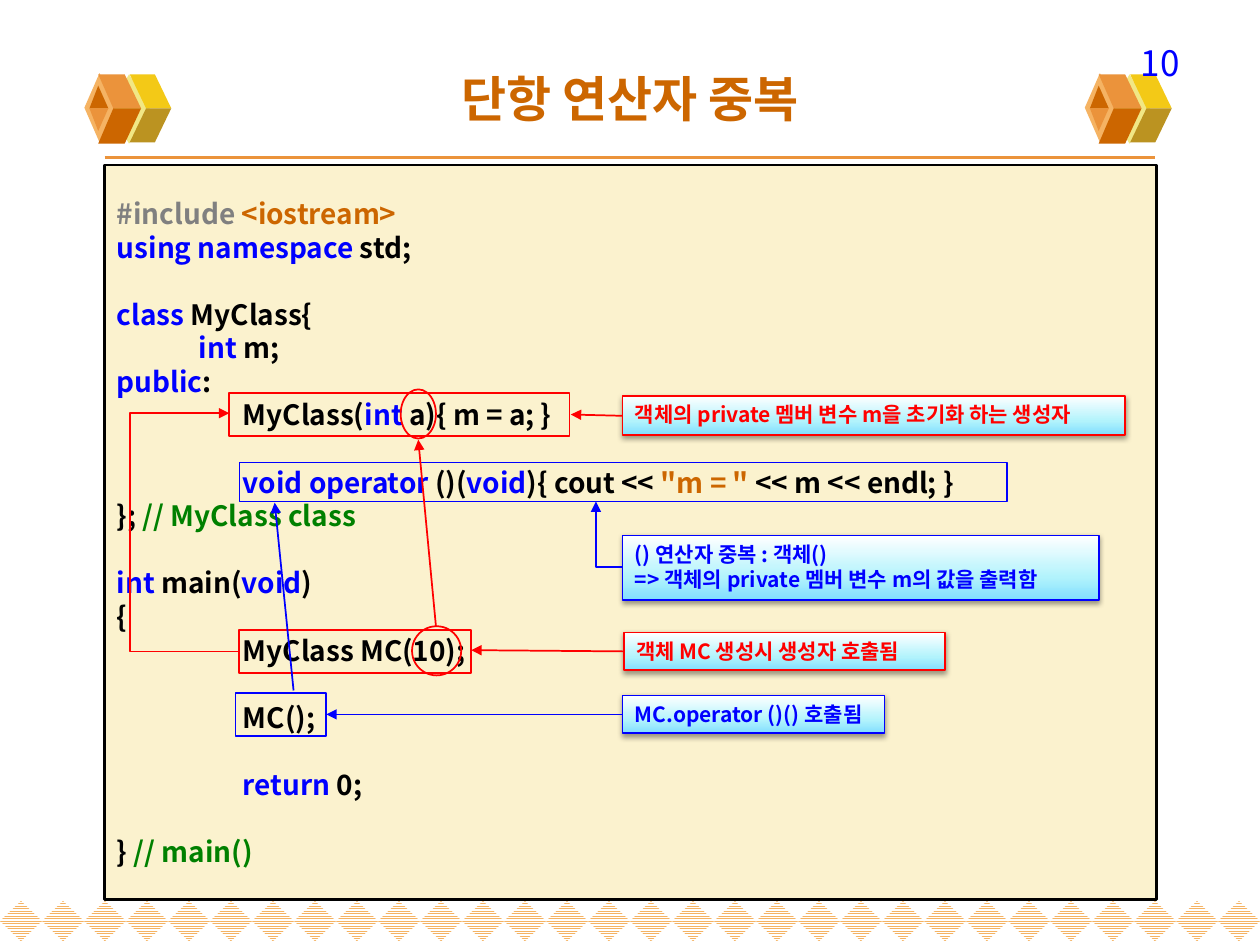
from copy import deepcopy

from lxml import etree
from pptx import Presentation
from pptx import util as u
from pptx.dml.color import RGBColor
from pptx.enum import dml, shapes, text
from pptx.oxml.ns import qn

FONT = "Noto Sans CJK KR"
BLACK = RGBColor(0x00, 0x00, 0x00)
WHITE = RGBColor(0xFF, 0xFF, 0xFF)
RED = RGBColor(0xFF, 0x00, 0x00)
BLUE = RGBColor(0x00, 0x00, 0xFF)
GREEN = RGBColor(0x00, 0x80, 0x00)
GRAY = RGBColor(0x80, 0x80, 0x80)
BROWN = RGBColor(0xCC, 0x66, 0x00)
ORANGE = RGBColor(0xEB, 0x93, 0x3B)
PEACH = RGBColor(0xF5, 0xB3, 0x63)
PALE_YELLOW = RGBColor(0xF1, 0xE7, 0x85)
YELLOW = RGBColor(0xF3, 0xC9, 0x17)
OLIVE = RGBColor(0xBB, 0x93, 0x21)
CREAM = RGBColor(0xFB, 0xF2, 0xCE)
CALLOUT_STOPS = [(0, RGBColor(0x81, 0xDE, 0xFF)), (0.35, RGBColor(0xB2, 0xF3, 0xFC)), (1, WHITE)]
SHAPE = shapes.MSO_SHAPE
ALIGN = text.PP_ALIGN
CODE_PITCH = u.Pt(19.2)

# Code lines: left indent in inches, blank lines above, coloured segments
CODE = [
    (0, 0, [("#include ", GRAY), ("<iostream>", BROWN)]),
    (0, 0, [("using namespace", BLUE), (" std;", BLACK)]),
    (0, 1, [("class ", BLUE), ("MyClass{", BLACK)]),
    (0.65, 0, [("int", BLUE), (" m;", BLACK)]),
    (0, 0, [("public", BLUE), (":", BLACK)]),
    (1, 0, [("MyClass(", BLACK), ("int", BLUE), (" a){ m = a; }", BLACK)]),
    (1, 1, [("void operator", BLUE), (" ()(", BLACK), ("void", BLUE), ("){ cout << ", BLACK),
            ('"m = "', BROWN), (" << m << endl; }", BLACK)]),
    (0, 0, [("}; ", BLACK), ("// MyClass class", GREEN)]),
    (0, 1, [("int", BLUE), (" main(", BLACK), ("void", BLUE), (")", BLACK)]),
    (0, 0, [("{", BLACK)]),
    (1, 0, [("MyClass MC(10);", BLACK)]),
    (1, 1, [("MC();", BLACK)]),
    (1, 1, [("return", BLUE), (" 0;", BLACK)]),
    (0, 1, [("} ", BLACK), ("// main()", GREEN)]),
]

CALLOUTS = [
    ((4.94, 3.14, 3.99, 0.31), RED, ["객체의 private 멤버 변수 m을 초기화 하는 생성자"]),
    ((4.94, 4.25, 3.78, 0.51), BLUE, ["() 연산자 중복 : 객체()", "=> 객체의 private 멤버 변수 m의 값을 출력함"]),
    ((4.94, 5.52, 2.08, 0.3), BLUE, ["MC.operator ()() 호출됨"]),
    ((4.95, 5.02, 2.55, 0.3), RED, ["객체 MC 생성시 생성자 호출됨"]),
]

MARKS = [
    (SHAPE.RECTANGLE, (1.82, 3.12, 2.7, 0.34), RED),
    (SHAPE.RECTANGLE, (1.9, 3.67, 6.09, 0.31), BLUE),
    (SHAPE.RECTANGLE, (1.9, 5, 1.84, 0.34), RED),
    (SHAPE.RECTANGLE, (1.87, 5.5, 0.72, 0.34), BLUE),
    (SHAPE.OVAL, (3.27, 4.97, 0.39, 0.39), RED),
    (SHAPE.OVAL, (3.18, 3.09, 0.28, 0.39), RED),
]

ARROWS = [
    ((4.94, 5.67, 2.59, 5.67), BLUE),
    ((4.95, 5.17, 3.74, 5.16), RED),
    ((4.94, 3.3, 4.53, 3.29), RED),
    ((3.46, 4.97, 3.32, 3.49), RED),
    ((2.33, 5.48, 2.18, 3.99), BLUE),
]

# Cube faces in hundredths of an inch from the cube's top-left corner
CUBE_RIGHT = [
    (YELLOW, [(49, 28), (69, 28), (56, 1), (36, 1)]),
    (OLIVE, [(49, 28), (69, 28), (56, 55), (36, 55)]),
]
CUBE_LEFT = [
    (ORANGE, [(23, 28), (45, 28), (32, 1), (11, 1)]),
    (BROWN, [(23, 28), (45, 28), (32, 56), (11, 56)]),
    (BROWN, [(11, 10), (4, 28), (19, 28)]),
    (ORANGE, [(11, 46), (4, 28), (19, 28)]),
]


def apply(target, **values):
    for name, value in values.items():
        setattr(target, name, value)


def inches(box):
    return [u.Inches(value) for value in box]


def add_run(paragraph, words, size, color, bold=True):
    run = paragraph.add_run()
    run.text = words
    apply(run.font, name=FONT, size=u.Pt(size), bold=bold)
    run.font.color.rgb = color
    run.font.fill.fore_color.rgb = color
    etree.SubElement(run.font._element, qn("a:ea"), typeface=FONT)


def add_shape(slide, kind, box, fill=None, line=None, width=1):
    shape = slide.shapes.add_shape(kind, *inches(box))
    paint(shape, fill, line, width)
    return shape


def paint(shape, fill=None, line=None, width=1):
    shape.shadow.inherit = False
    if fill is None:
        shape.fill.background()
    else:
        shape.fill.solid()
        shape.fill.fore_color.rgb = fill
    if line is None:
        shape.line.fill.background()
    else:
        shape.line.color.rgb = line
        shape.line.width = u.Pt(width)


def add_line(slide, ends, color, width=1, arrow=True, kind=shapes.MSO_CONNECTOR.STRAIGHT):
    connector = slide.shapes.add_connector(kind, *inches(ends))
    connector.line.color.rgb = color
    connector.line.width = u.Pt(width)
    properties = connector._element.spPr
    if arrow:
        etree.SubElement(properties.find(qn("a:ln")), qn("a:tailEnd"), type="triangle")
    etree.SubElement(properties, qn("a:effectLst"))
    return properties.find(qn("a:prstGeom"))


def add_border(slide, left, top, width, height, count=30):
    step = width / count
    for index in range(count):
        diamond = add_shape(slide, SHAPE.DIAMOND, (left + index * step, top, step, height))
        diamond.fill.patterned()
        diamond.fill.pattern = dml.MSO_PATTERN.NARROW_HORIZONTAL
        diamond.fill.fore_color.rgb = PEACH
        diamond.fill.back_color.rgb = WHITE


def add_faces(slide, left, top, faces):
    for color, points in faces:
        corners = [(left * 100 + x, top * 100 + y) for x, y in points]
        builder = slide.shapes.build_freeform(*corners[0], scale=u.Inches(0.01))
        builder.add_line_segments(corners[1:], close=True)
        paint(builder.convert_to_shape(), color)


def add_cube(slide, left, top):
    add_shape(slide, SHAPE.DIAMOND, (left + 0.19, top + 0.01, 0.33, 0.55), PALE_YELLOW)
    add_faces(slide, left, top, CUBE_RIGHT)
    add_shape(slide, SHAPE.DIAMOND, (left, top, 0.24, 0.55), PEACH)
    add_faces(slide, left, top, CUBE_LEFT)


def add_header(slide, box):
    title = slide.shapes.title
    apply(title, **dict(zip(("left", "top", "width", "height"), inches(box))))
    title.text_frame.vertical_anchor = text.MSO_ANCHOR.MIDDLE
    paragraph = title.text_frame.paragraphs[0]
    paragraph.alignment = ALIGN.CENTER
    add_run(paragraph, "단항 연산자 중복", 28, BROWN)
    # Slide number
    number = slide.shapes.add_textbox(*inches((7.13, 0.28, 2.33, 0.3)))
    number.text_frame.word_wrap = True
    paragraph = number.text_frame.paragraphs[0]
    paragraph.alignment = ALIGN.RIGHT
    add_run(paragraph, "10", 20, BLUE, bold=False)


def add_code(slide, box):
    frame = add_shape(slide, SHAPE.RECTANGLE, box, CREAM, BLACK, 1.5).text_frame
    apply(frame, word_wrap=True, vertical_anchor=text.MSO_ANCHOR.MIDDLE)
    for index, (indent, blanks, segments) in enumerate(CODE):
        paragraph = frame.add_paragraph() if index else frame.paragraphs[0]
        apply(paragraph, alignment=ALIGN.LEFT, line_spacing=CODE_PITCH, space_before=blanks * CODE_PITCH)
        paragraph._p.get_or_add_pPr().set("marL", str(u.Inches(indent)))
        for words, color in segments:
            add_run(paragraph, words, 16, color)


def add_callout(slide, box, color, lines):
    shape = add_shape(slide, SHAPE.RECTANGLE, box, WHITE, color)
    # Gradient and soft shadow
    shape.fill.gradient()
    shape.fill.gradient_angle = 90
    properties = shape._element.spPr
    stop_list = properties.find(".//" + qn("a:gsLst"))
    stop_list.insert(1, deepcopy(stop_list[0]))
    for stop, (position, stop_color) in zip(shape.fill.gradient_stops, CALLOUT_STOPS):
        stop.position = position
        stop.color.rgb = stop_color
    shadow = etree.SubElement(properties.find(qn("a:effectLst")), qn("a:outerShdw"), blurRad=str(u.Pt(3.1)),
                              dist=str(u.Pt(1.6)), dir="5400000", rotWithShape="0")
    shade = etree.SubElement(shadow, qn("a:srgbClr"), val=str(BLACK))
    etree.SubElement(shade, qn("a:alpha"), val="38000")
    # Text
    frame = shape.text_frame
    apply(frame, word_wrap=True, vertical_anchor=text.MSO_ANCHOR.TOP)
    for index, words in enumerate(lines):
        paragraph = frame.add_paragraph() if index else frame.paragraphs[0]
        apply(paragraph, alignment=ALIGN.JUSTIFY, line_spacing=u.Pt(14.4))
        add_run(paragraph, words, 12, color)


def add_elbows(slide):
    elbow = shapes.MSO_CONNECTOR.ELBOW
    add_line(slide, (4.94, 4.5, 4.73, 3.98), BLUE, kind=elbow).set("prst", "bentConnector2")
    # The bracket bends at x = 1.03, left of both ends
    start, end, bend = 1.9, 1.82, 1.03
    geometry = add_line(slide, (start, 5.17, end, 3.28), RED, kind=elbow)
    ratio = round((start - bend) / (start - end) * 100000)
    guides = geometry.find(qn("a:avLst"))
    if guides is None:
        guides = etree.SubElement(geometry, qn("a:avLst"))
    etree.SubElement(guides, qn("a:gd"), name="adj1", fmla=f"val {ratio}")


def main():
    presentation = Presentation()
    apply(presentation, slide_width=u.Inches(10), slide_height=u.Inches(7.5))
    slide = presentation.slides.add_slide(presentation.slide_layouts[5])
    # Decoration
    add_border(slide, 0, 7.15, 10, 0.32)
    add_line(slide, (0.83, 1.25, 9.17, 1.25), ORANGE, 2.25, arrow=False)
    for left in (0.67, 8.61):
        add_cube(slide, left, 0.58)
    # Content
    add_header(slide, (0.5, 0.3, 9, 0.95))
    add_code(slide, (0.83, 1.31, 8.35, 5.83))
    for callout in CALLOUTS:
        add_callout(slide, *callout)
    for kind, box, color in MARKS:
        add_shape(slide, kind, box, line=color)
    for ends, color in ARROWS:
        add_line(slide, ends, color)
    add_elbows(slide)
    presentation.save("out.pptx")


if __name__ == "__main__":
    main()
